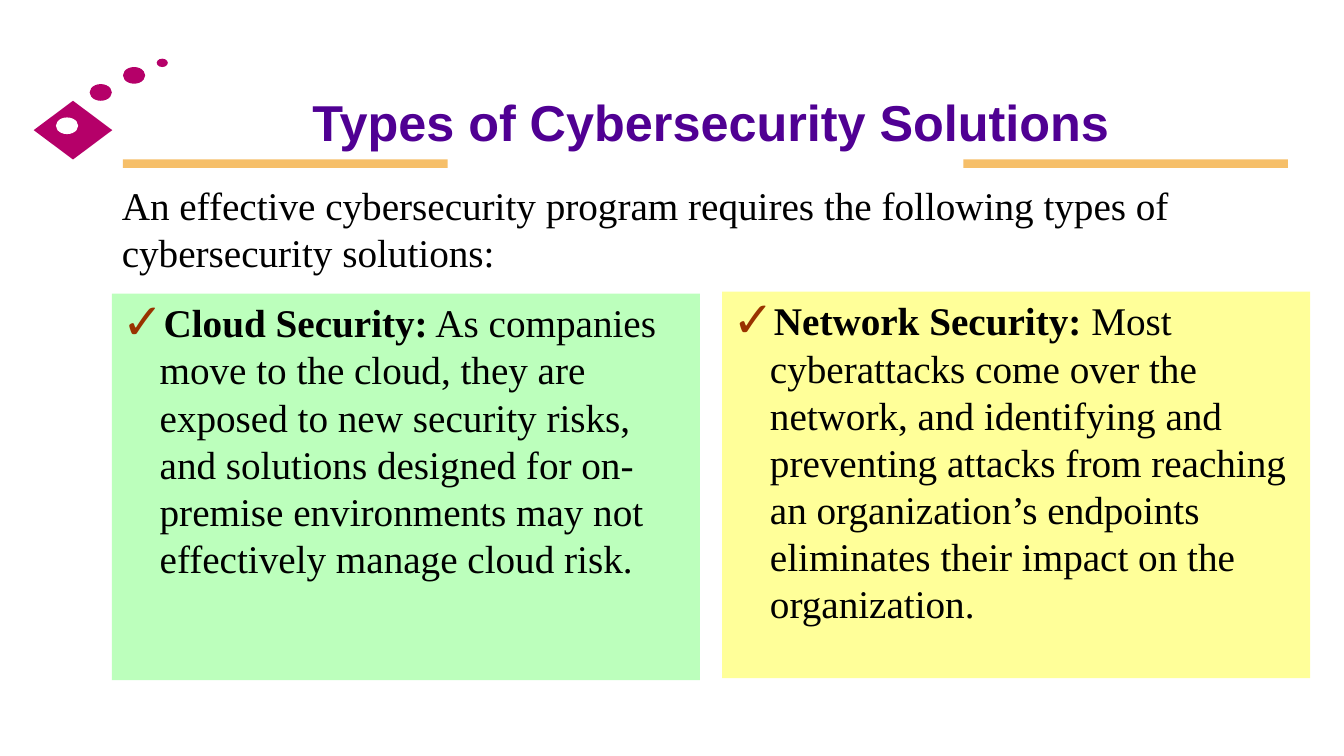
from dataclasses import dataclass

import pptx
import pptx.dml.color
import pptx.enum.shapes
import pptx.enum.text
import pptx.oxml
import pptx.oxml.ns
import pptx.util
from lxml import etree

Cm = pptx.util.Cm
Pt = pptx.util.Pt
MSO_SHAPE = pptx.enum.shapes.MSO_SHAPE


@dataclass(frozen=True)
class Theme:
    title_color: str = "500093"
    text_color: str = "000000"
    accent: str = "B50069"
    bar: str = "F6BF69"
    white: str = "FFFFFF"
    green: str = "BCFFBC"
    yellow: str = "FF  99".replace("  ", "FF")
    check: str = "993300"
    title_font: str = "Arial"
    body_font: str = "Times New Roman"
    title_size: float = 36
    body_size: float = 28
    check_percent: int = 127


THEME = Theme()

TITLE = "Types of Cybersecurity Solutions"
INTRO = ("An effective cybersecurity program requires the following types of "
         "cybersecurity solutions:")
# Left, top, fill, heading, text
PANELS = [
    (2.82, 7.4, THEME.green, "Cloud Security:",
     " As companies move to the cloud, they are exposed to new security risks, "
     "and solutions designed for on-premise environments may not effectively "
     "manage cloud risk."),
    (18.2, 7.35, THEME.yellow, "Network Security:",
     " Most cyberattacks come over the network, and identifying and preventing "
     "attacks from reaching an organization’s endpoints eliminates their impact "
     "on the organization."),
]
# Left, top, width, height, colour
DOTS = [
    (1.41, 2.96, 0.56, 0.42, THEME.white),
    (2.26, 2.12, 0.56, 0.42, THEME.accent),
    (3.1, 1.69, 0.56, 0.42, THEME.accent),
    (3.95, 1.48, 0.28, 0.21, THEME.accent),
]


def rgb(color):
    return pptx.dml.color.RGBColor.from_string(color)


def format_run(run, font, size, color, bold=False):
    run.font.name = font
    run.font.size = Pt(size)
    run.font.color.rgb = rgb(color)
    run.font.bold = bold


def place(shape, left, top, width, height):
    shape.left, shape.top = Cm(left), Cm(top)
    shape.width, shape.height = Cm(width), Cm(height)


def add_decoration(slide, kind, left, top, width, height, color):
    shape = slide.shapes.add_shape(kind, Cm(left), Cm(top), Cm(width), Cm(height))
    shape.shadow.inherit = False
    shape.fill.solid()
    shape.fill.fore_color.rgb = rgb(color)
    shape.line.fill.background()


def bring_to_front(shape):
    shape.element.getparent().append(shape.element)


def add_check_bullet(paragraph):
    properties = paragraph._p.get_or_add_pPr()
    properties.set("marL", str(Cm(0.95)))
    properties.set("indent", str(-Cm(0.95)))

    def add(parent, tag, **attributes):
        return etree.SubElement(parent, pptx.oxml.ns.qn(tag), attributes)

    add(add(properties, "a:buClr"), "a:srgbClr", val=THEME.check)
    add(properties, "a:buSzPct", val=str(THEME.check_percent * 1000))
    add(properties, "a:buFont", typeface=THEME.title_font)
    add(properties, "a:buChar", char="✓")


def fill_title(title):
    bring_to_front(title)
    place(title, 2.82, 1.69, 30.2, 2.74)
    frame = title.text_frame
    frame.text = TITLE
    frame.auto_size = pptx.enum.text.MSO_AUTO_SIZE.NONE
    frame.vertical_anchor = pptx.enum.text.MSO_ANCHOR.MIDDLE
    paragraph = frame.paragraphs[0]
    paragraph.alignment = pptx.enum.text.PP_ALIGN.CENTER
    format_run(paragraph.runs[0], THEME.title_font, THEME.title_size,
               THEME.title_color, bold=True)


def fill_panel(panel, left, top, color, heading, text):
    bring_to_front(panel)
    place(panel, left, top, 14.82, 9.74)
    panel.fill.solid()
    panel.fill.fore_color.rgb = rgb(color)
    frame = panel.text_frame
    frame.text = heading
    frame.auto_size = pptx.enum.text.MSO_AUTO_SIZE.NONE
    paragraph = frame.paragraphs[0]
    paragraph.add_run().text = text
    paragraph.space_before = Pt(THEME.body_size * 0.2)
    add_check_bullet(paragraph)
    for run, bold in zip(paragraph.runs, (True, False)):
        format_run(run, THEME.body_font, THEME.body_size, THEME.text_color, bold)


def add_intro(slide):
    box = slide.shapes.add_textbox(Cm(2.82), Cm(4.45), Cm(29.7), Cm(2.65))
    frame = box.text_frame
    frame.word_wrap = True
    frame.text = INTRO
    format_run(frame.paragraphs[0].runs[0], THEME.body_font, THEME.body_size,
               THEME.text_color)


def main():
    presentation = pptx.Presentation()
    presentation.slide_width, presentation.slide_height = Cm(33.87), Cm(19.05)
    two_content = presentation.slide_layouts[3]
    slide = presentation.slides.add_slide(two_content)

    # Bars under the title
    for left in (3.1, 24.28):
        add_decoration(slide, MSO_SHAPE.RECTANGLE, left, 4.02, 8.18, 0.21, THEME.bar)

    # Diamond with its trail of dots
    add_decoration(slide, MSO_SHAPE.DIAMOND, 0.85, 2.54, 1.98, 1.48, THEME.accent)
    for dot in DOTS:
        add_decoration(slide, MSO_SHAPE.OVAL, *dot)

    # Title, panels and introduction
    fill_title(slide.shapes.title)
    for index, panel in enumerate(PANELS, start=1):
        fill_panel(slide.placeholders[index], *panel)
    add_intro(slide)

    presentation.save("out.pptx")


if __name__ == "__main__":
    main()
